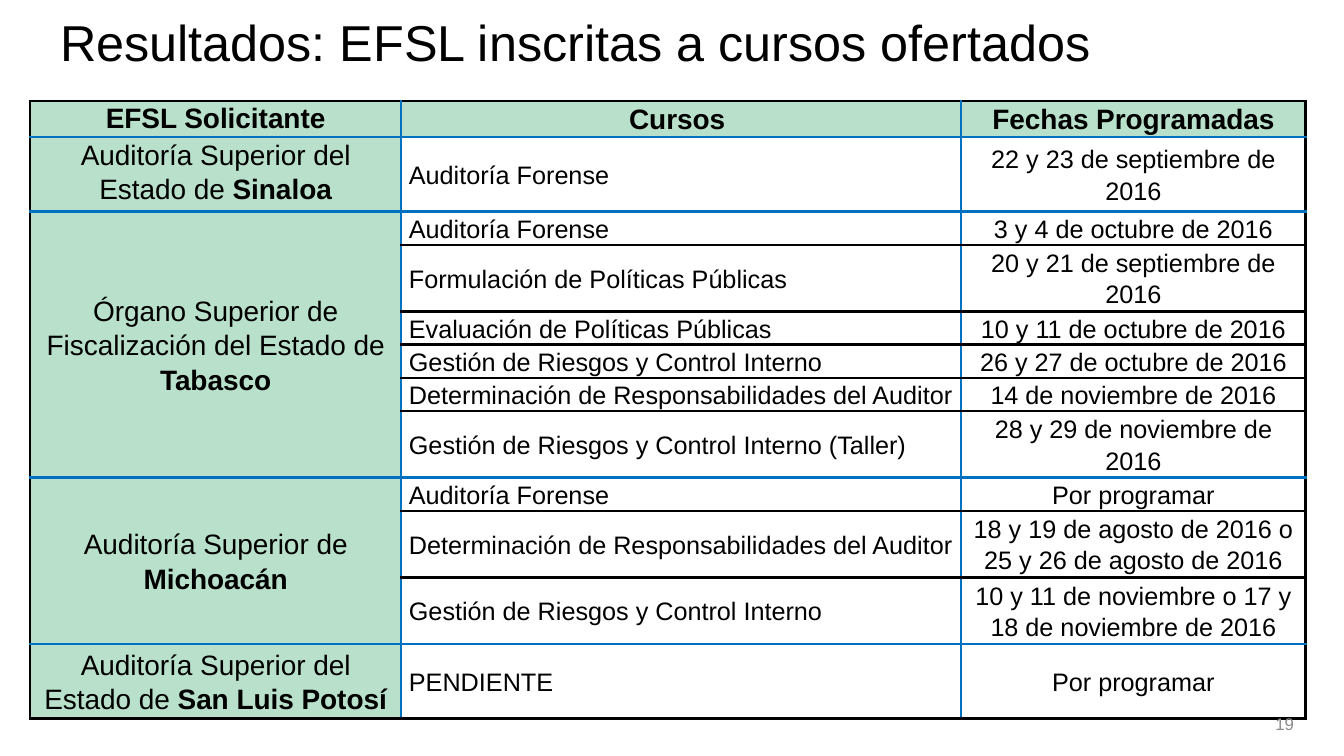
"""Build the slide listing the EFSL enrolled in the courses on offer."""
from dataclasses import dataclass

from lxml.etree import SubElement
from pptx import Presentation
from pptx.dml.color import RGBColor
from pptx.enum.text import MSO_ANCHOR, PP_ALIGN
from pptx.oxml.ns import qn
from pptx.util import Inches, Pt


@dataclass(frozen=True)
class Theme:
    font: str = "Arial"
    black: str = "000000"
    blue: str = "0070C0"
    green: str = "B8E0CA"
    gray: str = "8C8C8C"
    title_size: int = 18
    heading_size: int = 10
    body_size: int = 9
    number_size: int = 6
    border_width: int = 1


theme = Theme()

headings = ["EFSL Solicitante", "Cursos ", "Fechas Programadas"]
applicants = [
    ("Auditoría Superior del Estado de ", "Sinaloa", [
        ("Auditoría Forense", "22 y 23 de septiembre de 2016"),
    ]),
    ("Órgano Superior de Fiscalización del Estado de ", "Tabasco", [
        ("Auditoría Forense", "3 y 4 de octubre de 2016"),
        ("Formulación de Políticas Públicas", "20 y 21 de septiembre de 2016"),
        ("Evaluación de Políticas Públicas", "10 y 11 de octubre de 2016"),
        ("Gestión de Riesgos y Control Interno", "26 y 27 de octubre de 2016"),
        ("Determinación de Responsabilidades del Auditor", "14 de noviembre de 2016"),
        ("Gestión de Riesgos y Control Interno (Taller)", "28 y 29 de noviembre de 2016"),
    ]),
    ("Auditoría Superior de ", "Michoacán", [
        ("Auditoría Forense", "Por programar"),
        ("Determinación de Responsabilidades del Auditor",
         "18 y 19 de agosto de 2016 o 25 y 26 de agosto de 2016"),
        ("Gestión de Riesgos y Control Interno",
         "10 y 11 de noviembre o 17 y 18 de noviembre de 2016"),
    ]),
    ("Auditoría Superior del Estado de ", "San Luis Potosí", [
        ("PENDIENTE", "Por programar"),
    ]),
]
column_widths = [1.84, 2.78, 1.71]
header_height, office_height, double_height = 0.18, 0.37, 0.33
single_height = double_height / 2
row_heights = [
    header_height, office_height,
    single_height, double_height, single_height, single_height, single_height, double_height,
    single_height, double_height, double_height,
    office_height,
]


def write(paragraph, runs, size, alignment, spacing, color=theme.black):
    """Fill a paragraph with (text, bold) runs in one style."""
    paragraph.alignment = alignment
    paragraph.line_spacing = spacing
    paragraph.font.name = theme.font
    paragraph.font.size = Pt(size)
    paragraph.font.color.rgb = RGBColor.from_string(color)
    for text, bold in runs:
        run = paragraph.add_run()
        run.text = text
        run.font.bold = bold


def style_cell(cell, shaded, left, right, top, bottom):
    """Set the margins, fill and four border colours of a cell."""
    cell.margin_left = cell.margin_right = Inches(0.04)
    cell.margin_top = cell.margin_bottom = 0
    cell.vertical_anchor = MSO_ANCHOR.MIDDLE
    properties = cell._tc.get_or_add_tcPr()
    for side, color in zip("LRTB", (left, right, top, bottom)):
        line = SubElement(properties, qn(f"a:ln{side}"), w=str(Pt(theme.border_width)))
        SubElement(SubElement(line, qn("a:solidFill")), qn("a:srgbClr"), val=color)
    if shaded:
        cell.fill.solid()
        cell.fill.fore_color.rgb = RGBColor.from_string(theme.green)
    else:
        cell.fill.background()


presentation = Presentation()
presentation.slide_width = Inches(6.67)
presentation.slide_height = Inches(3.75)
slide = presentation.slides.add_slide(presentation.slide_layouts[6])

table = slide.shapes.add_table(
    len(row_heights), len(column_widths),
    Inches(0.15), Inches(0.5), Inches(sum(column_widths)), Inches(sum(row_heights)),
).table
table.first_row = table.horz_banding = False
for column, width in zip(table.columns, column_widths):
    column.width = Inches(width)
for row, height in zip(table.rows, row_heights):
    row.height = Inches(height)

last_row = len(row_heights) - 1
last_column = len(column_widths) - 1
group_starts = {1}
for _, _, courses in applicants:
    group_starts.add(max(group_starts) + len(courses))

for row_index in range(len(row_heights)):
    for column_index in range(len(column_widths)):
        inner_line = theme.blue if column_index == 0 else theme.black
        starts_group = row_index in group_starts
        ends_group = row_index < last_row and row_index + 1 in group_starts
        style_cell(
            table.cell(row_index, column_index),
            shaded=row_index == 0 or column_index == 0,
            left=theme.black if column_index == 0 else theme.blue,
            right=theme.black if column_index == last_column else theme.blue,
            top=theme.black if row_index == 0 else theme.blue if starts_group else inner_line,
            bottom=theme.black if row_index == last_row else theme.blue if ends_group else inner_line,
        )

for column_index, heading in enumerate(headings):
    write(table.cell(0, column_index).text_frame.paragraphs[0], [(heading, True)],
          theme.heading_size, PP_ALIGN.CENTER, 1.07)

row_index = 1
for office, state, courses in applicants:
    applicant_cell = table.cell(row_index, 0)
    if len(courses) > 1:
        applicant_cell.merge(table.cell(row_index + len(courses) - 1, 0))
    write(applicant_cell.text_frame.paragraphs[0], [(office, False), (state, True)],
          theme.heading_size, PP_ALIGN.CENTER, 1.1)
    for course, dates in courses:
        write(table.cell(row_index, 1).text_frame.paragraphs[0], [(course, False)],
              theme.body_size, PP_ALIGN.LEFT, 1.1)
        write(table.cell(row_index, 2).text_frame.paragraphs[0], [(dates, False)],
              theme.body_size, PP_ALIGN.CENTER, 1.1)
        row_index += 1

for top_row in (0, 1):
    table.cell(top_row, 0).vertical_anchor = MSO_ANCHOR.TOP

labels = [
    ("Resultados: EFSL inscritas a cursos ofertados", (0.2, 0, 5.75, 0.45),
     theme.title_size, PP_ALIGN.LEFT, 0.9, theme.black),
    ("19", (5.02, 3.49, 1.5, 0.2),
     theme.number_size, PP_ALIGN.RIGHT, 1.0, theme.gray),
]
for text, box, size, alignment, spacing, color in labels:
    text_frame = slide.shapes.add_textbox(*map(Inches, box)).text_frame
    text_frame.word_wrap = True
    text_frame.vertical_anchor = MSO_ANCHOR.MIDDLE
    write(text_frame.paragraphs[0], [(text, False)], size, alignment, spacing, color)

presentation.save("out.pptx")
